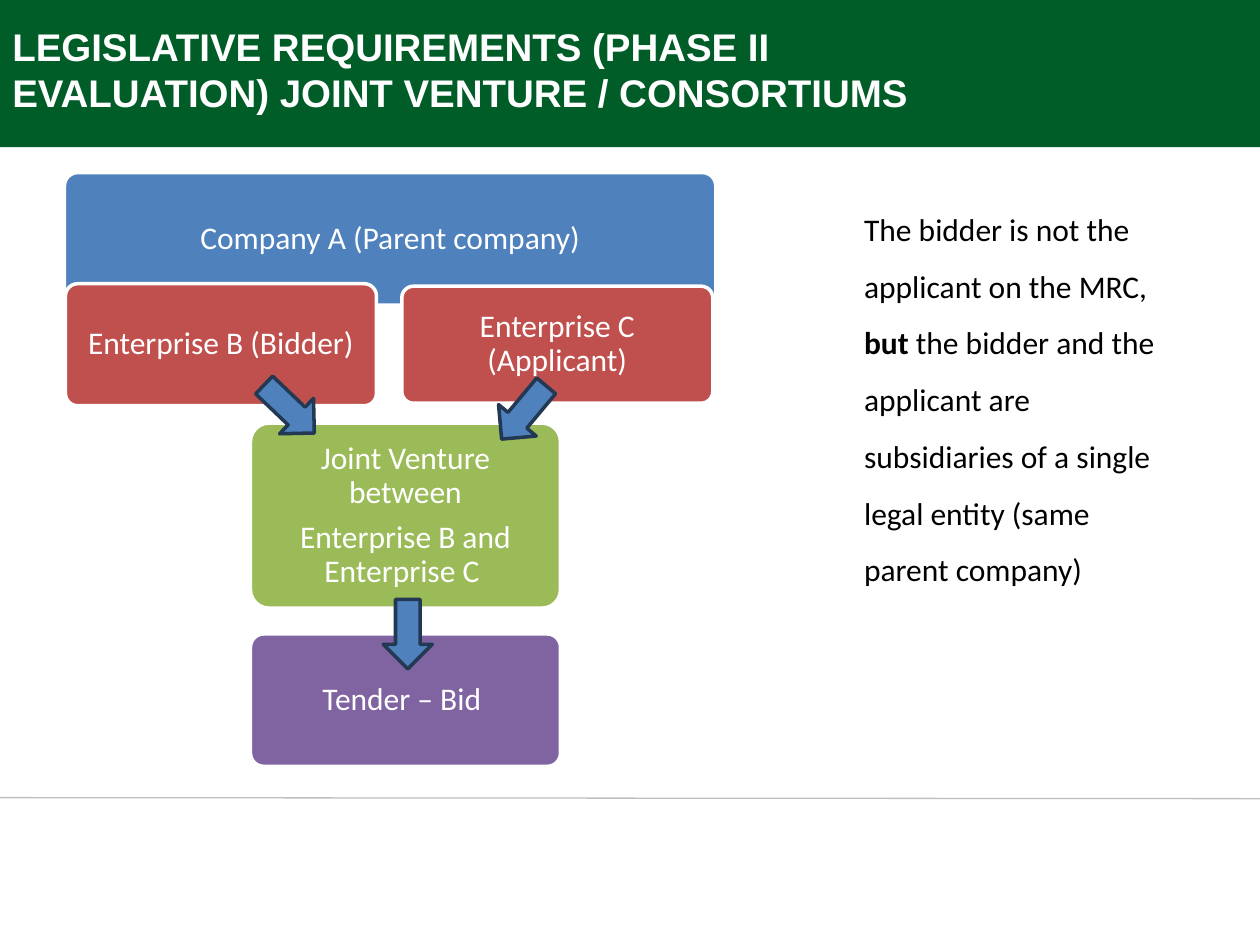
"""Build the joint venture slide with its company structure diagram."""
from lxml import etree
from pptx import Presentation
from pptx.dml.color import RGBColor
from pptx.enum import shapes, text
from pptx.oxml import ns
from pptx.util import Cm, Pt

WHITE = RGBColor(0xFF, 0xFF, 0xFF)
BLACK = RGBColor(0, 0, 0)
GREEN = RGBColor(0x00, 0x5D, 0x28)
GREY = RGBColor(0xBF, 0xBF, 0xBF)
BLUE = RGBColor(0x4F, 0x81, 0xBD)
NAVY = RGBColor(0x23, 0x39, 0x53)
RED = RGBColor(0xC0, 0x50, 0x4D)
LIME = RGBColor(0x9B, 0xBB, 0x59)
PURPLE = RGBColor(0x80, 0x64, 0xA2)

TITLE = "LEGISLATIVE REQUIREMENTS (PHASE II EVALUATION) JOINT VENTURE / CONSORTIUMS"
EXPLANATION = [
    ("The bidder is not the applicant on the MRC, ", False),
    ("but ", True),
    ("the bidder and the applicant are subsidiaries of a single legal entity "
     "(same parent company)", False),
]
BOXES = [
    (["Company A (Parent company)"], BLUE, (1.3, 3.48, 13.13, 2.67)),
    (["Enterprise B (Bidder)"], RED, (1.32, 5.72, 6.27, 2.46)),
    (["Joint Venture between", "Enterprise B and Enterprise C "], LIME,
     (5.05, 8.53, 6.25, 3.73)),
    (["Tender – Bid "], PURPLE, (5.05, 12.78, 6.25, 2.67)),
    (["Enterprise C (Applicant)"], RED, (8.1, 5.77, 6.27, 2.36)),
]
ARROWS = [(5.13, 7.75, 43.7), (9.86, 7.82, 129.9), (7.52, 12.29, 90)]
ARROW_SIZE = (1.4, 0.99)


def style_font(font, size, color, name="Calibri", bold=False):
    font.name, font.size, font.bold = name, Pt(size), bold
    font.color.rgb = color


def add_filled(slide, kind, place, fill, line=None):
    shape = slide.shapes.add_shape(kind, *map(Cm, place))
    shape.shadow.inherit = False
    shape.fill.solid()
    shape.fill.fore_color.rgb = fill
    if line is None:
        shape.line.fill.background()
    else:
        shape.line.color.rgb = line
        shape.line.width = Pt(2)
    return shape


def add_text(slide, place):
    text_frame = slide.shapes.add_textbox(*map(Cm, place)).text_frame
    text_frame.word_wrap = True
    return text_frame.paragraphs[0]


def add_box(slide, lines, fill, place):
    shape = add_filled(slide, shapes.MSO_SHAPE.ROUNDED_RECTANGLE, place, fill, WHITE)
    shape.adjustments[0] = 0.1
    text_frame = shape.text_frame
    text_frame.word_wrap = True
    text_frame.vertical_anchor = text.MSO_ANCHOR.MIDDLE
    text_frame.margin_left = text_frame.margin_right = Cm(0.25)
    text_frame.margin_top = text_frame.margin_bottom = Cm(0.25)
    text_frame.text = "\n".join(lines)
    for paragraph in text_frame.paragraphs:
        paragraph.alignment = text.PP_ALIGN.CENTER
        paragraph.line_spacing = 0.9
        paragraph.space_after = Pt(6.3)
        style_font(paragraph.runs[0].font, 18, WHITE)


def main():
    presentation = Presentation()
    presentation.slide_width, presentation.slide_height = Cm(25.4), Cm(19.05)
    slide = presentation.slides.add_slide(presentation.slide_layouts[6])

    add_filled(slide, shapes.MSO_SHAPE.RECTANGLE, (0, 0, 25.4, 2.97), GREEN)
    rule = slide.shapes.add_connector(
        shapes.MSO_CONNECTOR.STRAIGHT, *map(Cm, (0, 16.08, 25.4, 16.1)))
    rule.line.color.rgb = GREY
    rule.line.width = Pt(0.75)
    etree.SubElement(rule._element.spPr, ns.qn("a:effectLst"))

    paragraph = add_text(slide, (17.17, 3.73, 6.73, 8.2))
    paragraph.line_spacing = 1.5
    for words, bold in EXPLANATION:
        run = paragraph.add_run()
        run.text = words
        style_font(run.font, 18, BLACK, bold=bold)

    paragraph = add_text(slide, (0, 0.33, 19.84, 2.13))
    paragraph.text = TITLE
    style_font(paragraph.runs[0].font, 22, WHITE, "Arial", True)

    for lines, fill, place in BOXES:
        add_box(slide, lines, fill, place)
    for left, top, rotation in ARROWS:
        arrow = add_filled(slide, shapes.MSO_SHAPE.RIGHT_ARROW,
                           (left, top, *ARROW_SIZE), BLUE, NAVY)
        arrow.rotation = rotation

    presentation.save("out.pptx")


if __name__ == "__main__":
    main()
